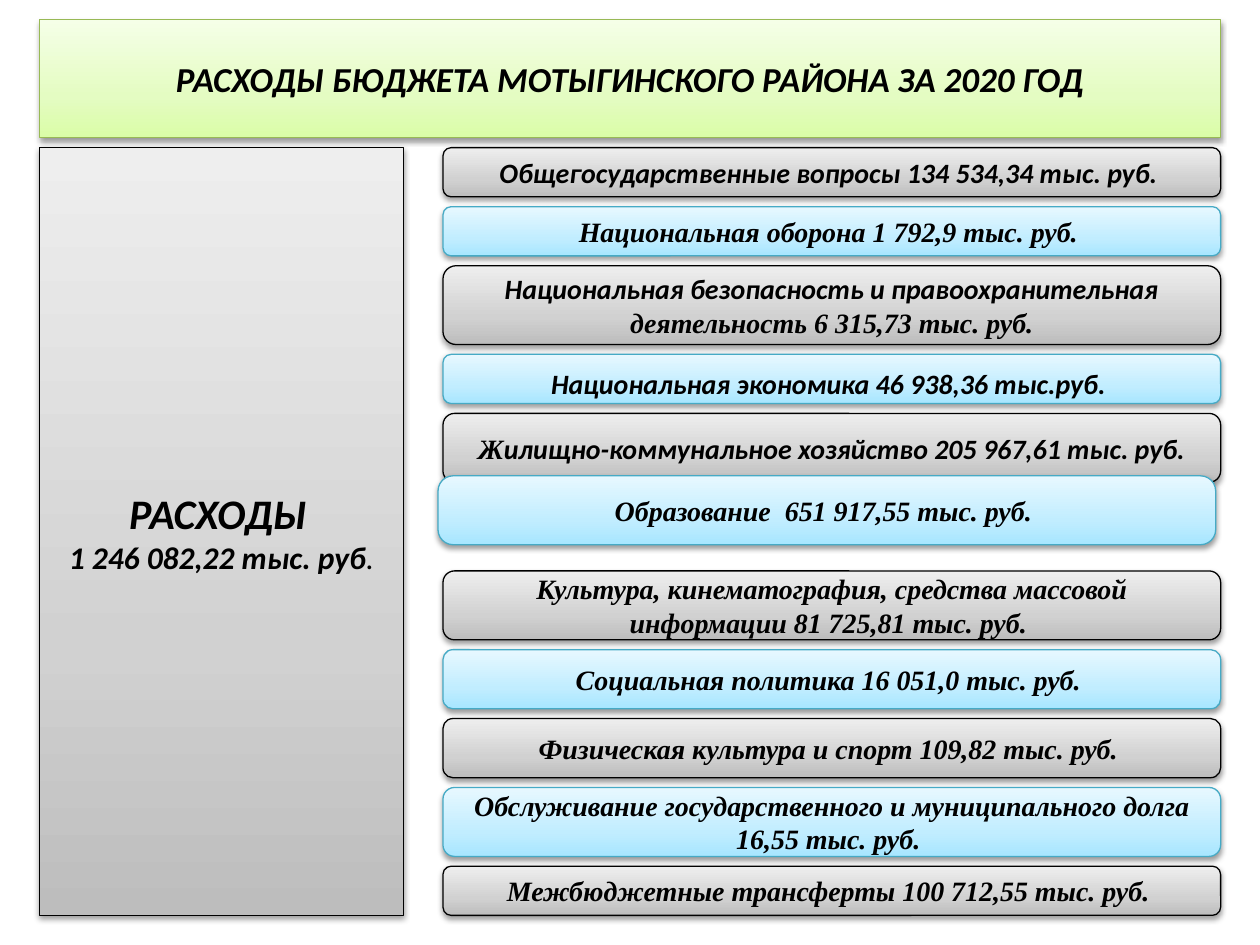
from lxml import etree
from pptx import Presentation
from pptx.dml.color import RGBColor
from pptx.enum.shapes import MSO_SHAPE
from pptx.enum.text import MSO_ANCHOR, PP_ALIGN
from pptx.oxml.ns import qn
from pptx.util import Cm, Pt

RECT = MSO_SHAPE.RECTANGLE
ROUNDED = MSO_SHAPE.ROUNDED_RECTANGLE
MIDDLE = MSO_ANCHOR.MIDDLE
CENTER = PP_ALIGN.CENTER

SANS = "Calibri"
SERIF = "Times New Roman"
COLORS = {
    "text": "000000",
    "shadow": "000000",
    "green": {"line": "98B955", "stops": ("DAFDA7", "E4FCC2", "F5FFE7")},
    "gray": {"line": "000000", "stops": ("BDBDBD", "D1D1D1", "EEEEEE")},
    "blue": {"line": "46AAC5", "stops": ("A7E6FF", "C1EDFF", "E7F8FF")},
}
STOP_POSITIONS = (0, 35, 100)

TITLE = "РАСХОДЫ БЮДЖЕТА МОТЫГИНСКОГО РАЙОНА ЗА 2020 ГОД"
TOTAL_LABEL = "РАСХОДЫ"
TOTAL_AMOUNT = "1 246 082,22 тыс. руб"

EXPENSES = [
    (5, [("Общегосударственные вопросы 134 534,34 тыс. руб. ", SANS)], {}),
    (5, [("Национальная оборона 1 792,9 тыс. руб. ", SERIF)], {}),
    (8, [("Национальная безопасность и правоохранительная ", SANS),
         ("деятельность 6 315,73 тыс. руб.", SERIF)], {}),
    (5, [("Национальная экономика 46 938,36 тыс.руб. ", SANS)], {"insets": (0.21, 0.03)}),
    (7, [("Ж", SERIF),
         ("илищно-коммунальное хозяйство 205 967,61 тыс. руб.", SANS)], {}),
    (7, [("Образование  651 917,55 тыс. руб. ", SERIF)],
     {"shift": (-0.1, -0.33), "corner": 0.22}),
    (7, [("Культура, кинематография, средства массовой информации 81 725,81 тыс. руб. ",
          SERIF)], {}),
    (6, [("Социальная политика 16 051,0 тыс. руб. ", SERIF)], {}),
    (6, [("Физическая культура и спорт 109,82 тыс. руб. ", SERIF)], {}),
    (7, [("Обслуживание государственного и муниципального долга 16,55 тыс. руб. ",
          SERIF)], {}),
    (5, [("Межбюджетные трансферты 100 712,55 тыс. руб. ", SERIF)], {}),
]

UNIT = 25.4 / 128
MARGIN, CONTENT_WIDTH = 4, 120
TITLE_TOP, TITLE_HEIGHT = 2, 12
BODY_TOP, GAP = 15, 1
TOTAL_WIDTH = 37
LIST_LEFT, LIST_WIDTH = 45, 79


def add_text(para, text, font=SANS, size=16, bold=True):
    span = para.add_run()
    span.text = text
    span.font.name = font
    span.font.size = Pt(size)
    span.font.bold = bold
    span.font.italic = True
    span.font.color.rgb = RGBColor.from_string(COLORS["text"])


def add_color(parent, color):
    return etree.SubElement(parent, qn("a:srgbClr"), val=color)


def paint(box, theme):
    box.fill.gradient()
    box.fill.gradient_angle = 90
    box.line.color.rgb = RGBColor.from_string(theme["line"])
    box.line.width = Pt(0.75)
    box.shadow.inherit = False
    properties = box._element.spPr
    stops = properties.find(".//" + qn("a:gsLst"))
    for stop in list(stops):
        stops.remove(stop)
    for position, color in zip(STOP_POSITIONS, theme["stops"]):
        add_color(etree.SubElement(stops, qn("a:gs"), pos=str(position * 1000)), color)
    shadow = etree.SubElement(
        properties.find(qn("a:effectLst")), qn("a:outerShdw"),
        blurRad="40000", dist="20000", dir="5400000", rotWithShape="0")
    etree.SubElement(add_color(shadow, COLORS["shadow"]), qn("a:alpha"), val="38000")


def add_box(page, kind, left, top, width, height, theme,
            shift=(0, 0), corner=None, insets=(0.13, 0.13)):
    box = page.shapes.add_shape(
        kind, Cm(left * UNIT + shift[0]), Cm(top * UNIT + shift[1]),
        Cm(width * UNIT), Cm(height * UNIT))
    paint(box, COLORS[theme])
    if corner is not None:
        box.adjustments[0] = corner
    frame = box.text_frame
    frame.word_wrap = True
    frame.vertical_anchor = MIDDLE
    frame.margin_top, frame.margin_bottom = map(Cm, insets)
    frame.paragraphs[0].alignment = CENTER
    return frame


def main():
    deck = Presentation()
    deck.slide_width, deck.slide_height = Cm(25.4), Cm(19.05)
    page = deck.slides.add_slide(deck.slide_layouts[6])

    title = add_box(page, RECT, MARGIN, TITLE_TOP, CONTENT_WIDTH, TITLE_HEIGHT, "green")
    add_text(title.paragraphs[0], TITLE, size=20)

    list_height = sum(row[0] for row in EXPENSES) + GAP * (len(EXPENSES) - 1)
    total = add_box(page, RECT, MARGIN, BODY_TOP, TOTAL_WIDTH, list_height, "gray")
    add_text(total.paragraphs[0], TOTAL_LABEL, size=24)
    add_text(total.paragraphs[0], " ", size=18)
    amount = total.add_paragraph()
    amount.alignment = CENTER
    add_text(amount, TOTAL_AMOUNT, size=18)
    add_text(amount, ".", size=18, bold=False)

    top = BODY_TOP
    for index, (height, spans, options) in enumerate(EXPENSES):
        theme = "blue" if index % 2 else "gray"
        frame = add_box(page, ROUNDED, LIST_LEFT, top, LIST_WIDTH, height, theme, **options)
        for text, font in spans:
            add_text(frame.paragraphs[0], text, font=font)
        top += height + GAP

    deck.save("out.pptx")


if __name__ == "__main__":
    main()
